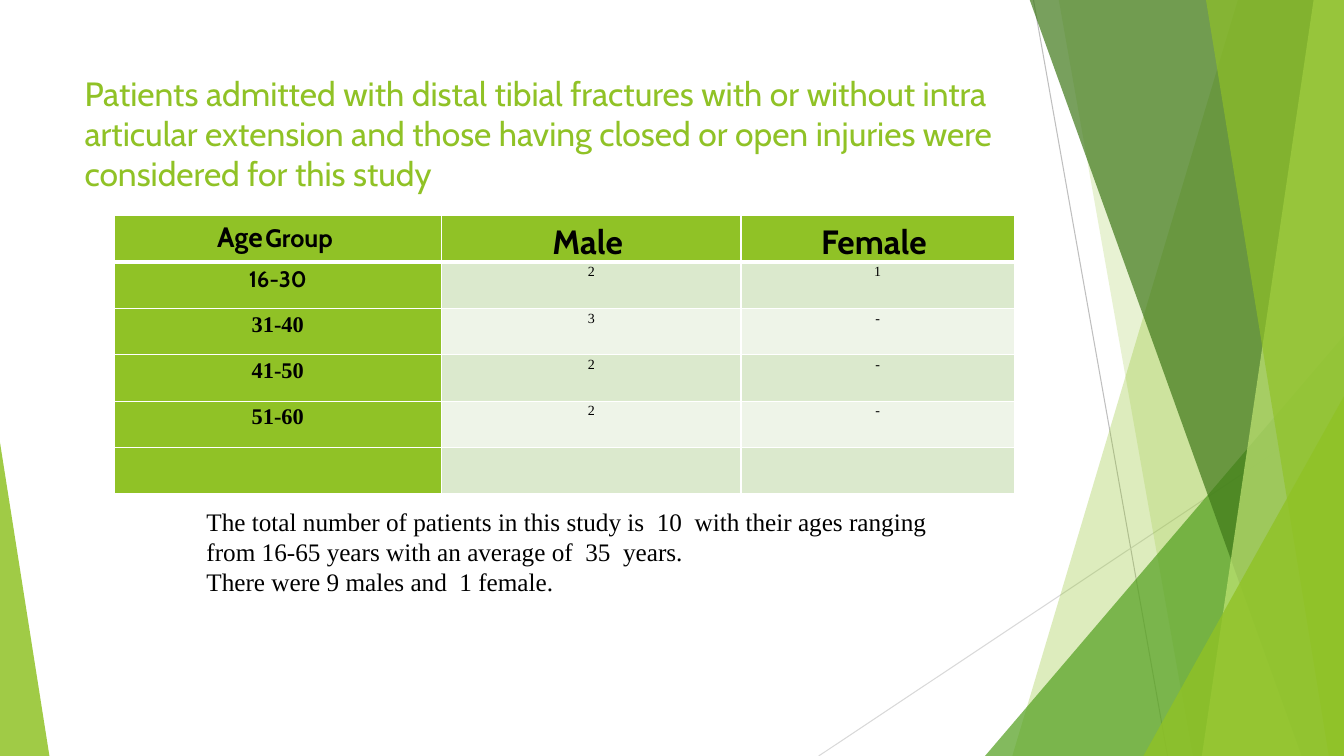
from dataclasses import dataclass

from lxml.etree import SubElement
from pptx import Presentation
from pptx.dml.color import RGBColor
from pptx.enum.shapes import MSO_CONNECTOR, MSO_SHAPE
from pptx.enum.text import MSO_ANCHOR, PP_ALIGN
from pptx.oxml import parse_xml
from pptx.oxml.ns import nsdecls, qn
from pptx.util import Inches, Pt

GREEN, WHITE, BLACK = "90C226", "FFFFFF", "000000"
BAND_DARK, BAND_LIGHT = "DBE9CD", "EEF4E8"
HEADING_FONT, BODY_FONT = "Cabin", "Times New Roman"
WIDTH, HEIGHT, TOP = 13.33, 7.5, -0.01


@dataclass
class Ray:
    start: tuple[float, float]
    end: tuple[float, float]
    color: str


@dataclass
class Panel:
    """A band reaching the right edge, with a slanted left side."""
    top_x: float
    bottom_x: float
    color: str
    opacity: int


@dataclass
class Corner:
    """A right triangle standing on the bottom edge."""
    left: float
    top: float
    width: float
    apex: float
    color: str
    opacity: int


@dataclass
class Words:
    text: str
    size: float
    font: str = HEADING_FONT
    bold: bool = True


RAYS = [
    Ray((10.25, 0), (11.58, HEIGHT), "BFBFBF"),
    Ray((WIDTH, 4.03), (8.12, HEIGHT), "D9D9D9"),
]
FACETS = [
    Panel(12.28, 10.04, GREEN, 30),
    Panel(10.5, 11.83, GREEN, 20),
    Corner(9.77, 3.33, 3.56, 1, "54A021", 72),
    Panel(10.21, 12.91, "3F7819", 70),
    Panel(13.03, 11.92, "C0E474", 70),
    Panel(11.96, 13.18, GREEN, 65),
    Corner(11.34, 3.93, 1.99, 1, GREEN, 80),
    Corner(0, 4.39, 0.49, 0, GREEN, 85),
]
HEADER = [
    [Words("Age", 20), Words(" ", 8), Words("Group ", 18)],
    [Words("Male ", 24)],
    [Words("Female ", 24)],
]
AGE_ROWS = [
    ("16-30", "2", "1"),
    ("31-40", "3", "-"),
    ("41-50", "2", "-"),
    ("51-60", "2", "-"),
    ("", "", ""),
]
COLUMN_WIDTHS = [3.25, 2.97, 2.71]
ROW_HEIGHT = 0.46


def rgb(color: str) -> RGBColor:
    return RGBColor.from_string(color)


def add_words(paragraph, text: str, *, size: float, font: str,
              color: str = BLACK, bold: bool = False) -> None:
    run = paragraph.add_run()
    run.text = text
    run.font.size = Pt(size)
    run.font.name = font
    run.font.bold = bold
    run.font.color.rgb = rgb(color)


def draw_ray(slide, ray: Ray) -> None:
    ends = [Inches(value) for value in ray.start + ray.end]
    line = slide.shapes.add_connector(MSO_CONNECTOR.STRAIGHT, *ends)
    line.line.color.rgb = rgb(ray.color)
    line.line.width = Pt(0.75)
    SubElement(line._element.spPr, qn("a:effectLst"))


def draw_facet(slide, facet: Panel | Corner) -> None:
    if isinstance(facet, Panel):
        builder = slide.shapes.build_freeform(
            Inches(facet.top_x), Inches(TOP))
        outline = [(WIDTH, TOP), (WIDTH, HEIGHT), (facet.bottom_x, HEIGHT)]
        builder.add_line_segments(
            [(Inches(x), Inches(y)) for x, y in outline], close=True)
        shape = builder.convert_to_shape()
    else:
        shape = slide.shapes.add_shape(
            MSO_SHAPE.ISOSCELES_TRIANGLE, Inches(facet.left),
            Inches(facet.top), Inches(facet.width),
            Inches(HEIGHT - facet.top))
        shape.adjustments[0] = facet.apex
    shape.shadow.inherit = False
    shape.line.fill.background()
    shape.fill.solid()
    shape.fill.fore_color.rgb = rgb(facet.color)
    tint = shape._element.spPr.find(qn("a:solidFill"))[0]
    SubElement(tint, qn("a:alpha"), val=str(facet.opacity * 1000))


def draw_text(slide, box: tuple[float, ...], paragraphs: list[str], *,
              size: float, font: str, color: str) -> None:
    frame = slide.shapes.add_textbox(
        *[Inches(value) for value in box]).text_frame
    frame.word_wrap = True
    frame.vertical_anchor = MSO_ANCHOR.TOP
    for index, text in enumerate(paragraphs):
        paragraph = frame.add_paragraph() if index else frame.paragraphs[0]
        add_words(paragraph, text, size=size, font=font, color=color)


def set_borders(cell, top: float, bottom: float) -> None:
    properties = cell._tc.get_or_add_tcPr()
    sides = {"lnL": 1, "lnR": 1, "lnT": top, "lnB": bottom}
    for position, (side, points) in enumerate(sides.items()):
        properties.insert(position, parse_xml(
            f'<a:{side} {nsdecls("a")} w="{Pt(points)}"><a:solidFill>'
            f'<a:srgbClr val="{WHITE}"/></a:solidFill></a:{side}>'))


def fill_cell(cell, words: list[Words], color: str, row: int) -> None:
    cell.margin_left = cell.margin_right = Inches(0.08)
    cell.margin_top = cell.margin_bottom = 0
    cell.fill.solid()
    cell.fill.fore_color.rgb = rgb(color)
    set_borders(cell, top=3 if row == 1 else 1, bottom=3 if row == 0 else 1)
    paragraph = cell.text_frame.paragraphs[0]
    paragraph.alignment = PP_ALIGN.CENTER
    paragraph.line_spacing = 1.15
    for part in words:
        if part.text:
            add_words(paragraph, part.text, size=part.size,
                      font=part.font, bold=part.bold)


def draw_age_table(slide) -> None:
    row_count = len(AGE_ROWS) + 1
    table = slide.shapes.add_table(
        row_count, len(COLUMN_WIDTHS), Inches(1.13), Inches(2.14),
        Inches(sum(COLUMN_WIDTHS)), Inches(ROW_HEIGHT * row_count)).table
    for column, width in zip(table.columns, COLUMN_WIDTHS):
        column.width = Inches(width)
    for column, words in enumerate(HEADER):
        fill_cell(table.cell(0, column), words, GREEN, 0)
    for row, (age, *counts) in enumerate(AGE_ROWS, start=1):
        age_font = HEADING_FONT if row == 1 else BODY_FONT
        fill_cell(table.cell(row, 0), [Words(age, 16, age_font)], GREEN, row)
        band = BAND_DARK if row % 2 else BAND_LIGHT
        for column, count in enumerate(counts, start=1):
            fill_cell(table.cell(row, column),
                      [Words(count, 10, BODY_FONT, False)], band, row)


def main() -> None:
    deck = Presentation()
    deck.slide_width, deck.slide_height = Inches(WIDTH), Inches(HEIGHT)
    slide = deck.slides.add_slide(deck.slide_layouts[6])

    # Background decoration
    for ray in RAYS:
        draw_ray(slide, ray)
    for facet in FACETS:
        draw_facet(slide, facet)

    # Title, table and summary
    draw_text(slide, (0.74, 0.67, 9.4, 1.44), [
        "Patients admitted with distal tibial fractures with or without intra "
        "articular extension and those having closed or open injuries were "
        "considered for this study",
    ], size=24, font=HEADING_FONT, color=GREEN)
    draw_age_table(slide)
    draw_text(slide, (1.95, 4.97, 7.37, 1.01), [
        "The total number of patients in this study is  10  with their ages "
        "ranging from 16-65 years with an average of  35  years.",
        "There were 9 males and  1 female.",
    ], size=18, font=BODY_FONT, color=BLACK)

    deck.save("out.pptx")


if __name__ == "__main__":
    main()
